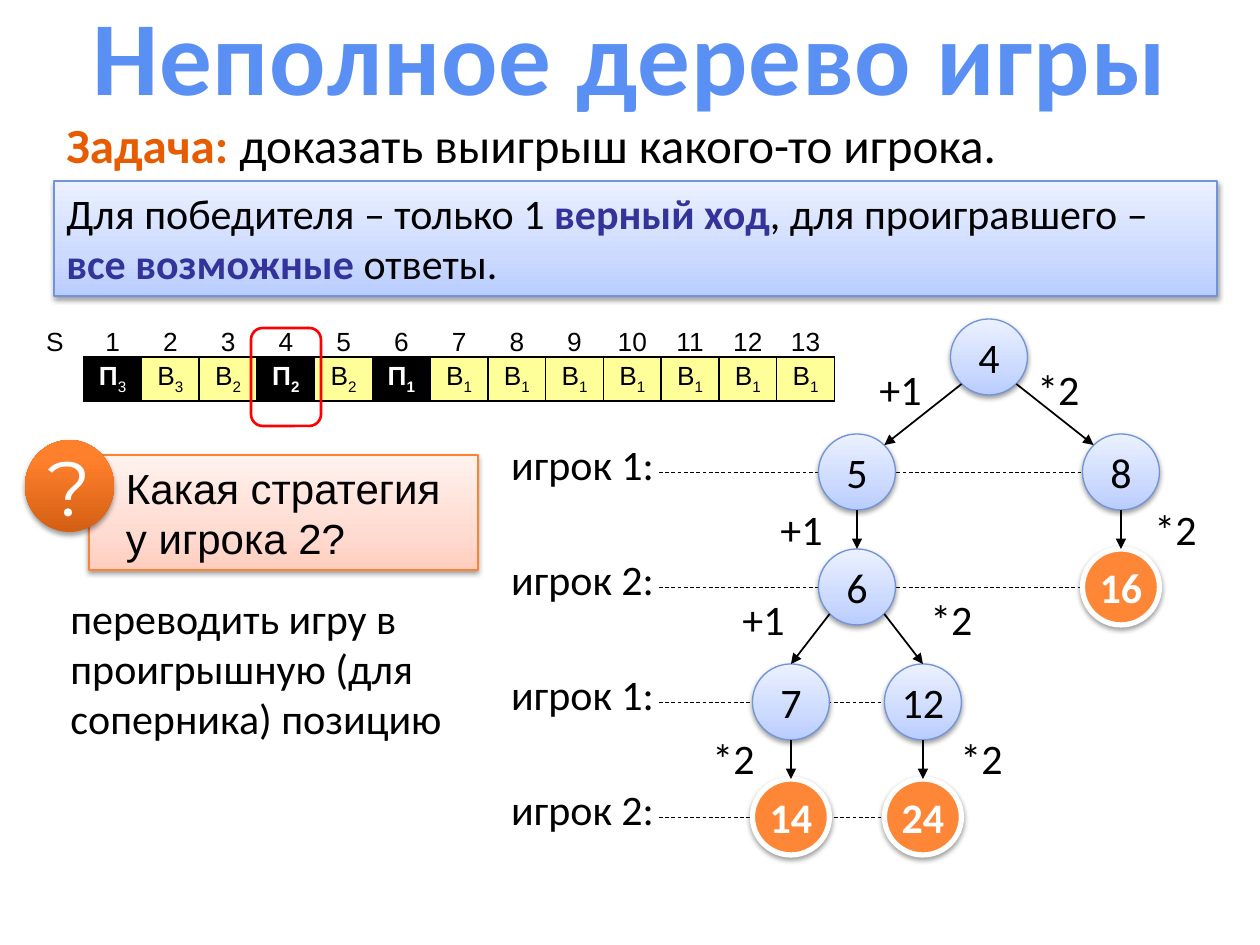
from pptx import Presentation
from pptx.dml.color import RGBColor as RGB
from pptx.enum.dml import MSO_LINE
from pptx.enum.shapes import MSO_CONNECTOR as CXN, MSO_SHAPE as SHP
from pptx.enum.text import MSO_ANCHOR as ANC, PP_ALIGN as AL
from pptx.oxml.ns import qn
from pptx.util import Emu, Pt
from lxml.etree import SubElement as Sub

BLACK, WHITE = RGB(0, 0, 0), RGB(255, 255, 255)
TITLE, TASK = RGB(0x5A, 0x90, 0xF4), RGB(0xE7, 0x5C, 0x01)
NAVY, EDGE = RGB(0x33, 0x33, 0x99), RGB(0x70, 0x94, 0xD7)
ORANGE, RIM = RGB(0xFE, 0x86, 0x37), RGB(0xFD, 0x82, 0x31)
YELLOW, RED = RGB(0xFF, 0xFF, 0x99), RGB(0xFF, 0, 0)
BLUES = [(0, RGB(0xB8, 0xCC, 0xFF)), (35, RGB(0xCC, 0xDA, 0xFF)),
         (100, RGB(0xEB, 0xF1, 0xFF))]
PINKS = [(0, RGB(0xFF, 0xCE, 0xBF)), (35, RGB(0xFF, 0xDC, 0xD2)),
         (100, RGB(0xFF, 0xF2, 0xEE))]
EMBER = [(0, RGB(0xD4, 0x5F, 0x13)), (80, RGB(0xFF, 0x80, 0x2C)),
         (100, RGB(0xFF, 0x81, 0x2E))]
NO_STYLE = "{2D5ABB26-0587-4C30-8999-92F81FD0307C}"
SCALE = 914400 / 126


def px(n):
    return Emu(round(n * SCALE))


def style(run, size, color=BLACK, bold=False, name="Calibri"):
    font = run.font
    font.size, font.name, font.bold = Pt(size), name, bold
    font.color.rgb = color


def write(shape, parts, size, align=AL.LEFT, anchor=ANC.TOP, pad=True,
          name="Calibri"):
    """Fill a shape with runs given as (text, colour, bold)."""
    frame = shape.text_frame
    frame.word_wrap, frame.vertical_anchor = True, anchor
    if not pad:
        frame.margin_left = frame.margin_right = 0
        frame.margin_top = frame.margin_bottom = 0
    para = frame.paragraphs[0]
    para.alignment = align
    for text, color, bold in parts:
        run = para.add_run()
        run.text = text
        style(run, size, color, bold, name)
    return frame


def label(slide, box, parts, size, **opts):
    area = slide.shapes.add_textbox(*map(px, box))
    return write(area, parts, size, **opts)


def blend(shape, stops):
    """Upward gradient with any number of stops."""
    shape.fill.gradient()
    shape.fill.gradient_angle = 90
    steps = shape._element.spPr.find(qn("a:gradFill")).find(qn("a:gsLst"))
    for old in list(steps):
        steps.remove(old)
    for pos, color in stops:
        stop = Sub(steps, qn("a:gs"), pos=str(pos * 1000))
        Sub(stop, qn("a:srgbClr"), val=str(color))


def shade(shape):
    effect = shape._element.spPr.find(qn("a:effectLst"))
    cast = Sub(effect, qn("a:outerShdw"), blurRad="39370", dist="20320",
               dir="5400000", rotWithShape="0")
    tint = Sub(cast, qn("a:srgbClr"), val="000000")
    Sub(tint, qn("a:alpha"), val="38000")


def panel(slide, kind, box, fill=None, line=None, width=0.75):
    shape = slide.shapes.add_shape(kind, *map(px, box))
    shape.shadow.inherit = False
    if isinstance(fill, list):
        blend(shape, fill)
    elif fill is not None:
        shape.fill.solid()
        shape.fill.fore_color.rgb = fill
    else:
        shape.fill.background()
    if line is None:
        shape.line.fill.background()
    else:
        shape.line.color.rgb, shape.line.width = line, Pt(width)
    if fill is not None:
        shade(shape)
    return shape


def link(slide, start, end, arrow=True):
    """Solid arrow or thin dashed guide."""
    line = slide.shapes.add_connector(CXN.STRAIGHT, *map(px, start + end))
    line.line.color.rgb, line.line.width = BLACK, Pt(1 if arrow else 0.5)
    props = line._element.spPr
    if arrow:
        Sub(props.find(qn("a:ln")), qn("a:tailEnd"), type="triangle")
    else:
        line.line.dash_style = MSO_LINE.DASH
    Sub(props, qn("a:effectLst"))


def head(slide, box):
    title = slide.shapes.title
    title.left, title.top, title.width, title.height = map(px, box)
    title.text_frame.text = "Неполное дерево игры"
    title.text_frame.vertical_anchor = ANC.MIDDLE
    para = title.text_frame.paragraphs[0]
    para.alignment = AL.CENTER
    style(para.runs[0], 60, TITLE, True)
    para.runs[0].font._element.set("spc", "50")


def task(slide, box):
    x, y, w, h = box
    label(slide, (x, y, w, 72),
          [("Задача: ", TASK, True),
           ("доказать выигрыш какого-то игрока.", BLACK, False)], 28)
    rule = panel(slide, SHP.RECTANGLE, (x, y + 73, w, h - 73), BLUES, EDGE)
    write(rule, [("Для победителя – только 1 ", BLACK, False),
                 ("верный ход", NAVY, True),
                 (", для проигравшего – ", BLACK, False),
                 ("все возможные", NAVY, True),
                 (" ответы.", BLACK, False)], 24)


def frame_cell(cell):
    props = cell._tc.get_or_add_tcPr()
    for side in ("L", "R", "T", "B"):
        edge = Sub(props, qn("a:ln" + side), w="12700")
        Sub(Sub(edge, qn("a:solidFill")), qn("a:srgbClr"), val=str(BLACK))


def board(slide, box):
    """Table of positions: S values over lost and won marks."""
    x, y, w, h = box
    marks = ["", "П3", "B3", "B2", "П2", "B2", "П1"] + ["В1"] * 7
    count = len(marks)
    table = slide.shapes.add_table(2, count, *map(px, box)).table
    table.first_row = table.horz_banding = False
    table._tbl.tblPr.find(qn("a:tableStyleId")).text = NO_STYLE
    for col, mark in enumerate(marks):
        table.columns[col].width = px(w / count)
        lost = mark.startswith("П")
        for row, text in enumerate((str(col or "S"), mark)):
            cell = table.cell(row, col)
            cell.margin_left = cell.margin_right = px(9)
            cell.margin_top = cell.margin_bottom = 0
            cell.vertical_anchor = ANC.MIDDLE if row else ANC.BOTTOM
            para = cell.text_frame.paragraphs[0]
            para.alignment = AL.CENTER
            para.font.size = Pt(15)
            if row and mark:
                frame_cell(cell)
                cell.fill.solid()
                cell.fill.fore_color.rgb = BLACK if lost else YELLOW
            else:
                cell.fill.background()
            for part in (text if row else [text]):
                run = para.add_run()
                run.text = part
                style(run, 15, WHITE if row and lost else BLACK,
                      bool(row) and lost and part != "3", "Arial")
                if row and part.isdigit():
                    run.font._element.set("baseline", "-25000")
    for row in table.rows:
        row.height = px(h / 2)
    # Ring around S = 4
    ring = (x + 225, y + 15, 70, 98)
    panel(slide, SHP.ROUNDED_RECTANGLE, ring, line=RED, width=1.5)


def ask(slide, box):
    x, y, w, h = box
    card = panel(slide, SHP.RECTANGLE, (x + 64, y + 15, w - 64, h - 15),
                 PINKS, RIM)
    frame = write(card, [("Какая стратегия у игрока 2?", BLACK, False)], 24,
                  anchor=ANC.MIDDLE, name="Arial")
    frame.margin_left = px(37)
    badge = panel(slide, SHP.OVAL, (x, y, 89, 92), EMBER)
    write(badge, [("?", WHITE, False)], 44, AL.CENTER, ANC.MIDDLE,
          name="Montserrat").word_wrap = False


def tree(slide, box):
    x, y = box[:2]
    gap, wide, tall = 115, 77, 76
    mid = {"align": AL.CENTER, "anchor": ANC.MIDDLE, "pad": False}
    # Node: column centre, row, won
    nodes = {"4": (528, 0, False), "5": (396, 1, False), "8": (660, 1, False),
             "6": (396, 2, False), "16": (660, 2, True),
             "7": (330, 3, False), "12": (462, 3, False),
             "14": (330, 4, True), "24": (462, 4, True)}
    # Move: parent, child, exit and entry side, name, name centre
    moves = [("4", "5", "sw", "ne", "+1", 439, 69),
             ("4", "8", "se", "nw", "*2", 597, 69),
             ("5", "6", "s", "n", "+1", 340, 209),
             ("8", "16", "s", "n", "*2", 714, 209),
             ("6", "7", "sw", "n", "+1", 302, 299),
             ("6", "12", "se", "n", "*2", 490, 299),
             ("7", "14", "s", "n", "*2", 272, 438),
             ("12", "24", "s", "n", "*2", 520, 438)]

    def spot(key, side=""):
        col, row, _ = nodes[key]
        reach = 0.71 if len(side) == 2 else 1
        dx = ("e" in side) - ("w" in side)
        dy = ("s" in side) - ("n" in side)
        return (x + col + dx * reach * wide / 2,
                y + tall / 2 + row * gap + dy * reach * tall / 2)

    # Player rows with guides up to the last node
    for row, last in enumerate(("8", "16", "12", "24"), 1):
        end = spot(last, "w")
        link(slide, (x + 198, end[1]), end, arrow=False)
        name = f"игрок {2 - row % 2}:"
        label(slide, (x, end[1] - 33, 193, 66), [(name, BLACK, False)], 24,
              align=AL.RIGHT, pad=False)
    for key, (_, _, won) in nodes.items():
        cx, cy = spot(key)
        look = (ORANGE, WHITE, 3) if won else (BLUES, EDGE, 0.75)
        node = panel(slide, SHP.OVAL,
                     (cx - wide / 2, cy - tall / 2, wide, tall), *look)
        write(node, [(key, WHITE if won else BLACK, won)], 24, **mid)
    for start, end, out, into, name, cx, cy in moves:
        link(slide, spot(start, out), spot(end, into))
        label(slide, (x + cx - 41, y + cy - 38, 83, 77),
              [(name, BLACK, False)], 24, **mid)


def main():
    deck = Presentation()
    deck.slide_width, deck.slide_height = px(1260), px(945)
    slide = deck.slides.add_slide(deck.slide_layouts[5])
    head(slide, (0, 0, 1260, 107))
    tree(slide, (461, 319, 737, 536))
    task(slide, (54, 108, 1163, 188))
    board(slide, (26, 313, 809, 88))
    ask(slide, (25, 440, 453, 130))
    label(slide, (58, 586, 433, 165),
          [("переводить игру в проигрышную (для соперника) позицию",
            BLACK, False)], 24)
    deck.save("out.pptx")


if __name__ == "__main__":
    main()
